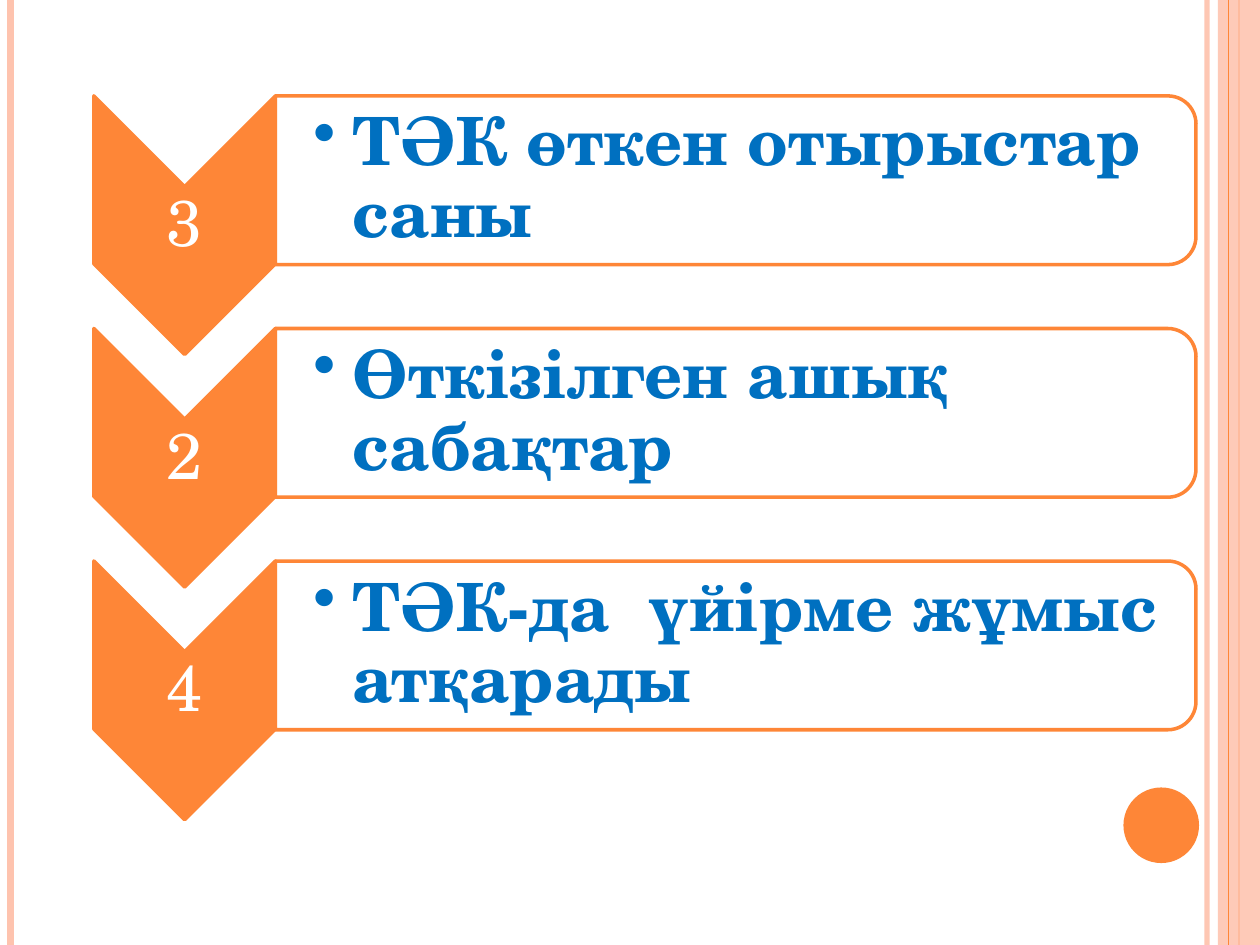
from lxml import etree
from pptx import Presentation
from pptx.dml.color import RGBColor
from pptx.enum import shapes, text
from pptx.oxml import ns
from pptx.util import Pt

ORANGE = RGBColor(0xFE, 0x86, 0x37)
PEACH = RGBColor(0xFE, 0xC3, 0xAE)
BLUE = RGBColor(0x00, 0x70, 0xC0)
WHITE = RGBColor(0xFF, 0xFF, 0xFF)
FONT = "TeX Gyre Schola"
WIDE, HIGH = 720, 540
ROWS = [
    ("3", "ТӘК өткен отырыстар саны"),
    ("2", "Өткізілген ашық сабақтар"),
    ("4", "ТӘК-да  үйірме жұмыс атқарады"),
]


def fade(fill, alpha):
    """Make a solid fill or line partly clear; alpha is in percent."""
    color = fill._xPr.find(".//" + ns.qn("a:srgbClr"))
    etree.SubElement(color, ns.qn("a:alpha"), val=str(alpha * 1000))


def add_shape(slide, kind, x, y, w, h, color, alpha=100, edge=None):
    """Add a flat preset shape."""
    shape = slide.shapes.add_shape(kind, Pt(x), Pt(y), Pt(w), Pt(h))
    shape.shadow.inherit = False
    shape.fill.solid()
    shape.fill.fore_color.rgb = color
    if alpha < 100:
        fade(shape.fill, alpha)
    if edge:
        shape.line.color.rgb = edge
        shape.line.width = Pt(2)
    else:
        shape.line.fill.background()
    return shape


def add_turned(slide, kind, x, y, w, h, color, alpha=100):
    """Add an outlined shape turned by 90 degrees to fill the given box."""
    shape = add_shape(slide, kind, x + (w - h) / 2, y + (h - w) / 2, h, w,
                      color, alpha, ORANGE)
    shape.rotation = 90


def add_text(slide, x, y, w, h, words, size, color, inset=2.2):
    """Add a middle-anchored text box and return its paragraph."""
    frame = slide.shapes.add_textbox(Pt(x), Pt(y), Pt(w), Pt(h)).text_frame
    frame.word_wrap = True
    frame.vertical_anchor = text.MSO_ANCHOR.MIDDLE
    frame.margin_left = Pt(inset)
    frame.margin_top = frame.margin_right = frame.margin_bottom = Pt(2.2)
    para = frame.paragraphs[0]
    para.text = words
    para.line_spacing = 0.9
    para.font.name = FONT
    para.font.size = Pt(size)
    para.font.color.rgb = color
    return para


def add_rule(slide, x, color, width, alpha=100):
    """Add a full-height vertical rule."""
    rule = slide.shapes.add_connector(
        shapes.MSO_CONNECTOR.STRAIGHT, Pt(x), Pt(0), Pt(x), Pt(HIGH))
    rule.line.color.rgb = color
    rule.line.width = Pt(width)
    if alpha < 100:
        fade(rule.line.fill, alpha)
    etree.SubElement(rule._element.spPr, ns.qn("a:effectLst"))


def add_frame(slide):
    """Add the edge rules, the side band and the dot."""
    add_rule(slide, 689.8, PEACH, 3, 93)
    add_rule(slide, 6, PEACH, 4.5)
    add_rule(slide, 708, ORANGE, 1.5)
    add_shape(slide, shapes.MSO_SHAPE.RECTANGLE, 696, 0, WIDE - 696, HIGH,
              PEACH, 87)
    add_rule(slide, 702, ORANGE, 0.75)
    add_shape(slide, shapes.MSO_SHAPE.OVAL, 642, 450, 43.2, 43.2, ORANGE)


def add_row(slide, x, y, w, h, count, words):
    """Add a numbered chevron with its bulleted panel."""
    arm, deep = 103.8, 96.4
    add_turned(slide, shapes.MSO_SHAPE.CHEVRON, x, y, arm, h, ORANGE)
    para = add_text(slide, x, y + 51.8, arm, 44.5, count, 37, WHITE)
    para.alignment = text.PP_ALIGN.CENTER
    add_turned(slide, shapes.MSO_SHAPE.ROUND_2_SAME_RECTANGLE, x + arm, y,
               w - arm, deep, WHITE, 90)
    para = add_text(slide, x + arm, y + 4.7, w - arm - 4.7, deep - 9.4,
                    words, 38, BLUE, 21.6)
    para.font.bold = True
    props = para._p.get_or_add_pPr()
    props.set("marL", str(Pt(22.5)))
    props.set("indent", str(-Pt(22.5)))
    bullet = etree.Element(ns.qn("a:buChar"), char="•")
    props.find(ns.qn("a:defRPr")).addprevious(bullet)


def main():
    """Build and save the slide."""
    deck = Presentation()
    deck.slide_width, deck.slide_height = Pt(WIDE), Pt(HIGH)
    slide = deck.slides.add_slide(deck.slide_layouts[6])
    add_frame(slide)
    for i, (count, words) in enumerate(ROWS):
        add_row(slide, 53.6, 54.8 + i * 132.9, 629.8, 147.8, count, words)
    deck.save("out.pptx")


if __name__ == "__main__":
    main()
